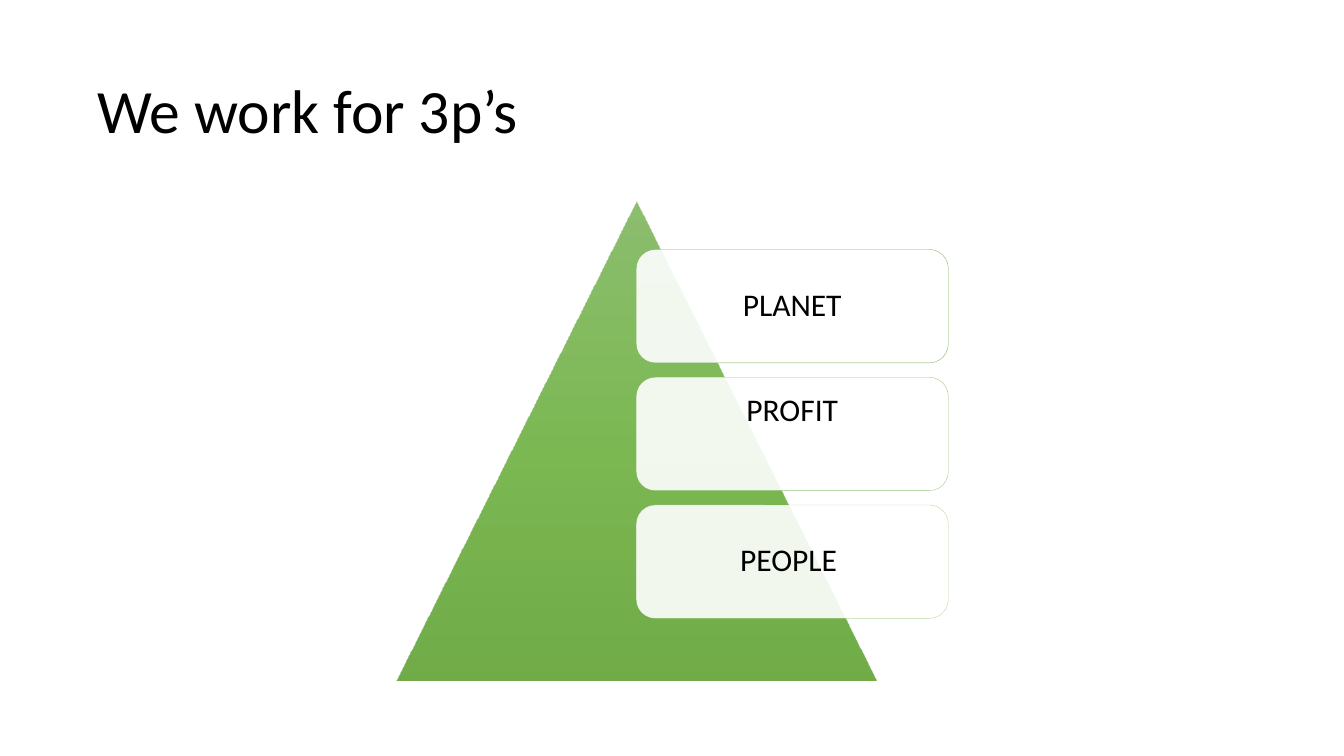
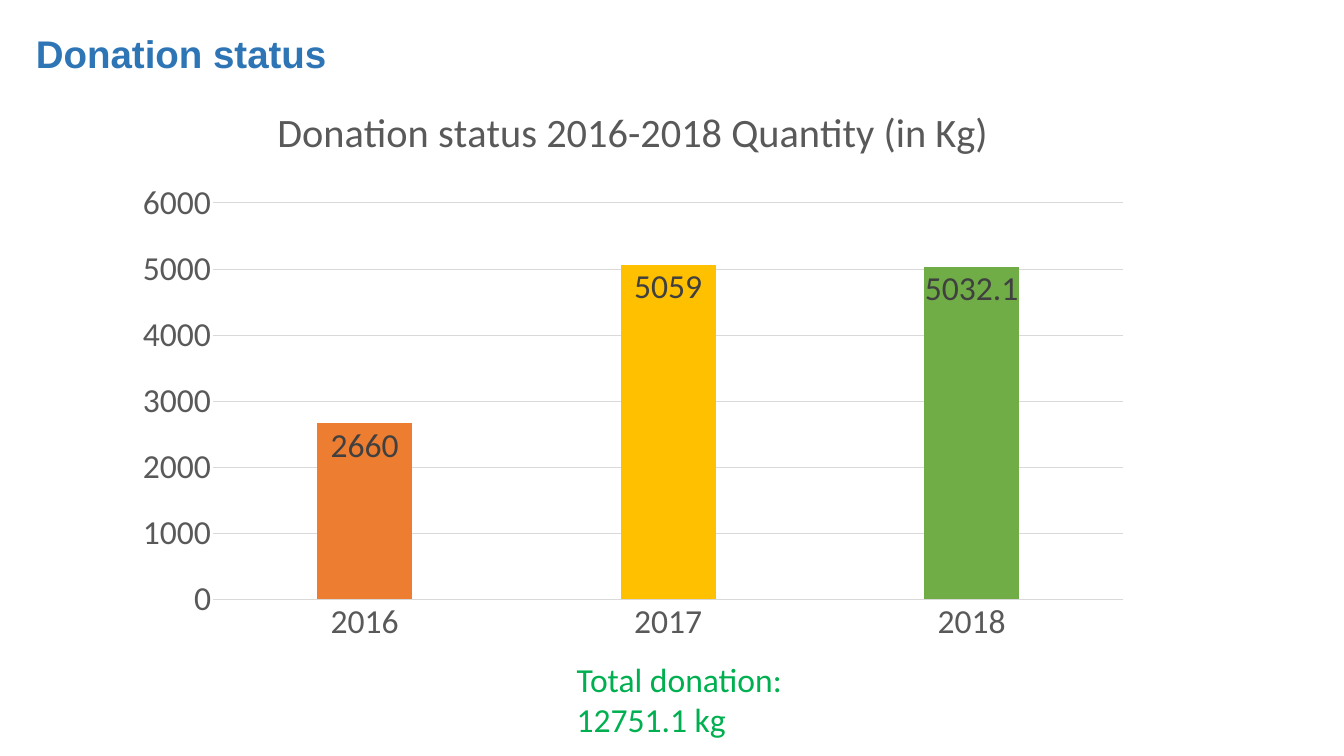
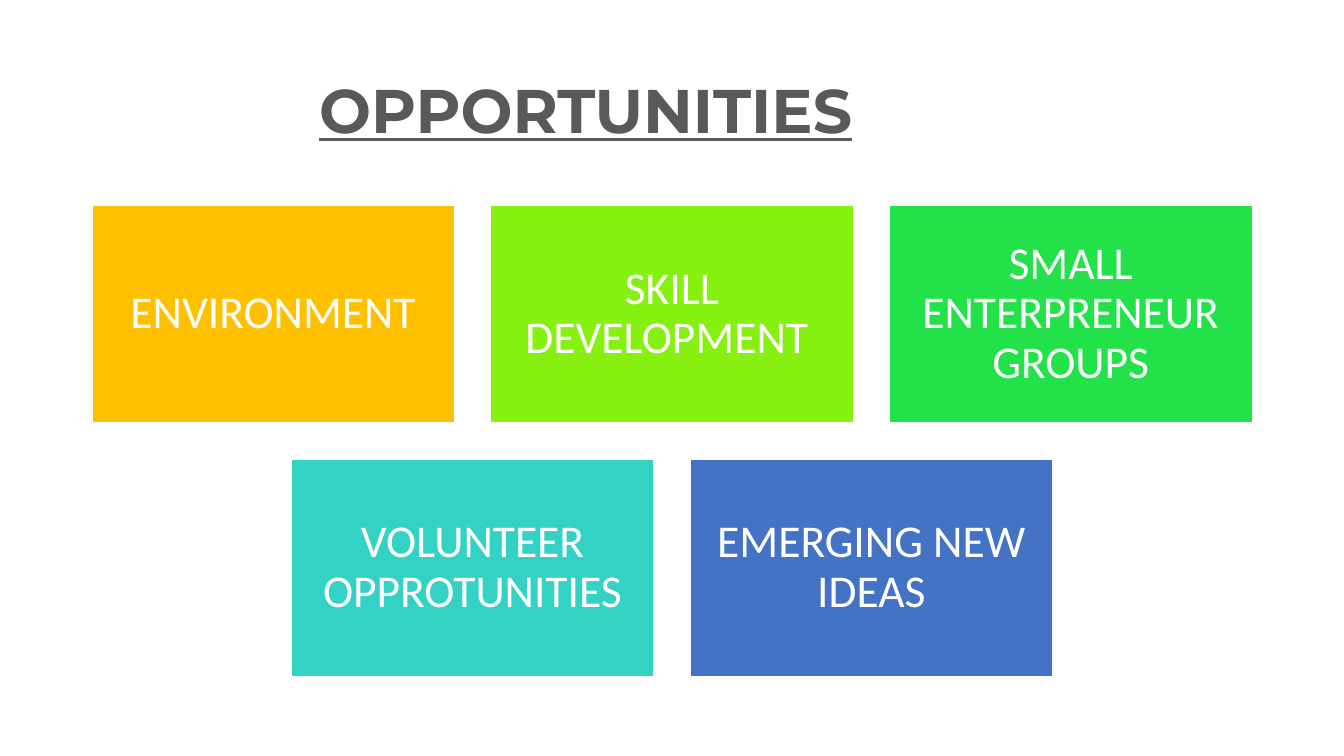
"""Build three slides: the 3p's pyramid, the donation chart and the opportunity tiles."""
from copy import deepcopy

from lxml import etree
from pptx import Presentation
from pptx.chart.data import CategoryChartData
from pptx.dml.color import RGBColor
from pptx.enum.chart import XL_CHART_TYPE, XL_LABEL_POSITION, XL_TICK_MARK
from pptx.enum.shapes import MSO_SHAPE
from pptx.enum.text import MSO_ANCHOR, MSO_AUTO_SIZE, PP_ALIGN
from pptx.oxml.ns import qn
from pptx.util import Inches, Pt

COLUMN = XL_CHART_TYPE.COLUMN_CLUSTERED
INSIDE_END = XL_LABEL_POSITION.INSIDE_END
NO_TICK = XL_TICK_MARK.NONE
TRIANGLE, ROUNDED, RECT = MSO_SHAPE.ISOSCELES_TRIANGLE, MSO_SHAPE.ROUNDED_RECTANGLE, MSO_SHAPE.RECTANGLE
MIDDLE = MSO_ANCHOR.MIDDLE
NO_FIT = MSO_AUTO_SIZE.NONE
LEFT, CENTER = PP_ALIGN.LEFT, PP_ALIGN.CENTER

SLIDE_W, SLIDE_H = 26.66, 15
TITLE_BOX = (1.83, 0.8, 22.99, 2.9)
FONT = "Calibri"
BLACK, WHITE, GREY, RULE, GREEN = "000000", "FFFFFF", "595959", "D9D9D9", "70AD47"

PYRAMID_TITLE = "We work for 3p’s"
PYRAMID_BOX = (7.86, 3.99, 9.52, 9.52)
PYRAMID_COLORS = ["81B861", "6FB242", "62A336"]
# label, line opacity, extra bottom inset
CARDS = [("PLANET", 90, 0), ("PROFIT", 70, 0.91), ("PEOPLE ", 50, 0)]
CARD_X, CARD_Y, CARD_W, CARD_H, CARD_STEP = 12.62, 4.95, 6.19, 2.25, 2.535

DONATION_TITLE = "Donation status"
CHART_TITLE = "Donation status 2016-2018 Quantity (in Kg)"
CHART_BOX = (2.43, 1.65, 20.26, 11.32)
DONATIONS = [("2016", 2660, "ED7D31"), ("2017", 5059, "FFC000"), ("2018", 5032.1, GREEN)]
TOTAL = "Total donation: 12751.1 kg"

TILE_TITLE = "OPPORTUNITIES"
TILE_ROWS = [
    [("ENVIRONMENT", "FFC000"), ("SKILL DEVELOPMENT ", "86F011"),
     ("SMALL ENTERPRENEUR GROUPS", "23E148")],
    [("VOLUNTEER OPPROTUNITIES", "33D2C5"), ("EMERGING NEW IDEAS", "4472C4")],
]
TILE_Y, TILE_W, TILE_H, TILE_GAP = 4.08, 7.19, 4.31, 0.72


def rgb(color):
    """Turn a hex string into a colour."""
    return RGBColor.from_string(color)


def inches(box):
    """Turn a tuple of numbers into lengths."""
    return [Inches(v) for v in box]


def style(font, size, color, name=FONT, bold=False):
    """Set the look of a font."""
    font.size, font.name, font.bold = Pt(size), name, bold
    font.color.rgb = rgb(color)


def write(sp, text, size, color, name=FONT, bold=False, align=LEFT, spacing=0.9):
    """Write one paragraph into a shape and return its run."""
    tf = sp.text_frame
    tf.word_wrap = True
    p = tf.paragraphs[0]
    p.alignment, p.line_spacing = align, spacing
    r = p.add_run()
    r.text = text
    style(r.font, size, color, name, bold)
    return r


def set_insets(tf, inset, extra_bottom=0):
    """Set equal insets, with an optional addition at the bottom."""
    tf.margin_left = tf.margin_right = tf.margin_top = Inches(inset)
    tf.margin_bottom = Inches(inset + extra_bottom)
    tf.vertical_anchor = MIDDLE


def set_opacity(element, percent):
    """Give every colour below an element an opacity."""
    for clr in element.iter(qn("a:srgbClr")):
        etree.SubElement(clr, qn("a:alpha")).set("val", str(percent * 1000))


def add_title(s, text, size, color, box=TITLE_BOX, **look):
    """Fill and place the title placeholder and return its run."""
    sp = s.shapes.title
    sp.left, sp.top, sp.width, sp.height = inches(box)
    sp.text_frame.auto_size = NO_FIT
    sp.text_frame.vertical_anchor = MIDDLE
    return write(sp, text, size, color, **look)


def add_box(s, kind, box, fill, line, width):
    """Add a flat filled and outlined shape."""
    sp = s.shapes.add_shape(kind, *inches(box))
    sp.shadow.inherit = False
    sp.fill.solid()
    sp.fill.fore_color.rgb = rgb(fill)
    sp.line.color.rgb = rgb(line)
    sp.line.width = Pt(width)
    return sp


def add_pyramid(s):
    """Add the triangle with its three-stop gradient."""
    sp = s.shapes.add_shape(TRIANGLE, *inches(PYRAMID_BOX))
    sp.shadow.inherit = False
    sp.line.fill.background()
    sp.fill.gradient()
    sp.fill.gradient_angle = 270
    grad = sp._element.spPr.find(qn("a:gradFill"))
    stops = grad.find(qn("a:gsLst"))
    stops.insert(1, deepcopy(stops[0]))
    for i, (stop, color) in enumerate(zip(sp.fill.gradient_stops, PYRAMID_COLORS)):
        stop.color.rgb = rgb(color)
        stop.position = i / 2
    set_opacity(grad, 90)


def pyramid_slide(s):
    """Build the pyramid and its three cards."""
    add_title(s, PYRAMID_TITLE, 88, BLACK)
    add_pyramid(s)
    for i, (label, opacity, extra) in enumerate(CARDS):
        box = (CARD_X, CARD_Y + i * CARD_STEP, CARD_W, CARD_H)
        sp = add_box(s, ROUNDED, box, WHITE, GREEN, 0.5)
        set_opacity(sp._element.spPr.find(qn("a:solidFill")), 90)
        set_opacity(sp._element.spPr.find(qn("a:ln")), opacity)
        set_insets(sp.text_frame, 0.3, extra)
        write(sp, label, 45, BLACK, align=CENTER)


def donation_slide(s):
    """Build the donation column chart and the total."""
    add_title(s, DONATION_TITLE, 55, "2E75B6", (0.61, 0.76, 9.39, 0.8),
              name="Arial", bold=True, spacing=0.7)
    data = CategoryChartData()
    data.categories = [year for year, _, _ in DONATIONS]
    data.add_series("Series 1", [kg for _, kg, _ in DONATIONS])
    chart = s.shapes.add_chart(COLUMN, *inches(CHART_BOX), data).chart
    style(chart.font, 48, BLACK)
    chart.has_legend = False
    chart.has_title = True
    r = chart.chart_title.text_frame.paragraphs[0].add_run()
    r.text = CHART_TITLE
    style(r.font, 57.6, GREY)

    for axis in (chart.category_axis, chart.value_axis):
        axis.major_tick_mark = axis.minor_tick_mark = NO_TICK
        style(axis.tick_labels.font, 48, GREY)
    chart.value_axis.format.line.fill.background()
    for rule in (chart.category_axis.format.line, chart.value_axis.major_gridlines.format.line):
        rule.color.rgb = rgb(RULE)
        rule.width = Pt(0.75)

    plot = chart.plots[0]
    plot.gap_width, plot.overlap, plot.vary_by_categories = 219, -27, False
    series = plot.series[0]
    for i, (_, _, color) in enumerate(DONATIONS):
        fill = series.points[i].format.fill
        fill.solid()
        fill.fore_color.rgb = rgb(color)
    labels = series.data_labels
    labels.show_value, labels.position = True, INSIDE_END
    style(labels.font, 48, "404040")

    total = s.shapes.add_textbox(*inches((11.34, 13.02, 4.41, 1.72)))
    write(total, TOTAL, 48, "00B050", spacing=1.0)


def tile_slide(s):
    """Build the rows of tiles, each centred on the slide."""
    r = add_title(s, TILE_TITLE, 88, GREY, name="Montserrat", bold=True)
    r.font.underline = True
    s.shapes.title.text_frame.margin_left = Inches(4.5)
    for i, row in enumerate(TILE_ROWS):
        step = TILE_W + TILE_GAP
        left = (SLIDE_W - len(row) * step + TILE_GAP) / 2
        top = TILE_Y + i * (TILE_H + TILE_GAP)
        for j, (label, color) in enumerate(row):
            sp = add_box(s, RECT, (left + j * step, top, TILE_W, TILE_H), color, WHITE, 1)
            set_insets(sp.text_frame, 0.27)
            write(sp, label, 65, WHITE, align=CENTER)


def main():
    """Build and save the presentation."""
    prs = Presentation()
    prs.slide_width, prs.slide_height = Inches(SLIDE_W), Inches(SLIDE_H)
    for build in (pyramid_slide, donation_slide, tile_slide):
        build(prs.slides.add_slide(prs.slide_layouts[5]))
    prs.save("out.pptx")


if __name__ == "__main__":
    main()
